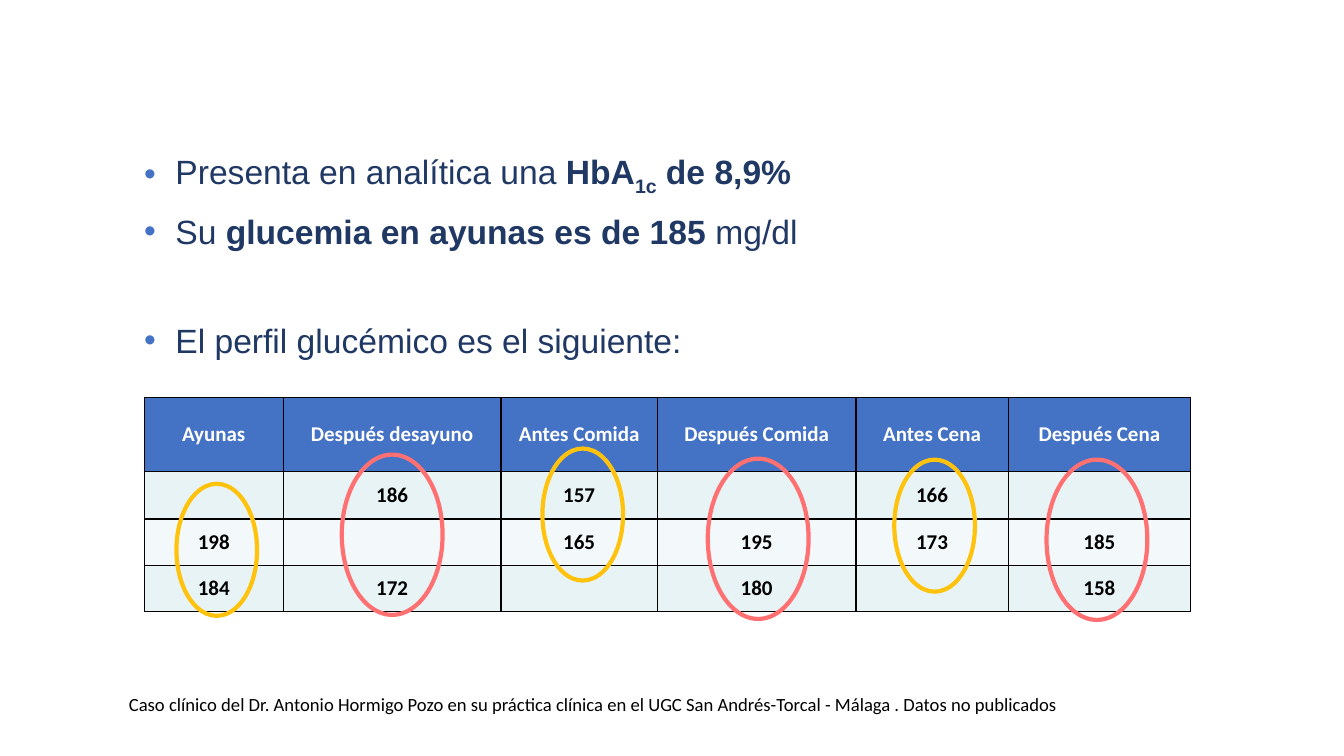
import dataclasses

import lxml.etree
import pptx
import pptx.dml.color
import pptx.enum.shapes
import pptx.enum.text
import pptx.oxml.ns
import pptx.util

Inches = pptx.util.Inches
Pt = pptx.util.Pt
ALIGN = pptx.enum.text.PP_ALIGN


@dataclasses.dataclass(frozen=True)
class Theme:
    blue: str = "4472C4"
    navy: str = "203864"
    white: str = "FFFFFF"
    black: str = "000000"
    bands: tuple = ("E7F3F4", "F3F9FA")
    yellow: str = "FFC30D"
    pink: str = "FF7072"
    body_font: str = "Arial"
    table_font: str = "Calibri"
    body_size: float = 24
    table_size: float = 15
    source_size: float = 13.3


THEME = Theme()

# Each bullet: space before in points, then (text, format) spans
BULLETS = [
    (0, [("Presenta en analítica una ", {}), ("HbA", {"bold": True}),
         ("1c", {"bold": True, "baseline": -25}), (" de 8,9%", {"bold": True})]),
    (10, [("Su ", {}), ("glucemia en ayunas es de 185 ", {"bold": True}), ("mg/dl", {})]),
    (49, [("El perfil glucémico es el siguiente:", {})]),
]
PROFILE = [
    ["Ayunas", "Después desayuno", "Antes Comida", "Después Comida", "Antes Cena", "Después Cena"],
    ["", "186", "157", "", "166", ""],
    ["198", "", "165", "195", "173", "185"],
    ["184", "172", "", "180", "", "158"],
]
COLUMN_WIDTHS = [1.38, 2.16, 1.55, 1.97, 1.51, 1.81]
ROW_HEIGHTS = [0.74, 0.47, 0.46, 0.46]
# Ring offsets from the table's corner; before-meal and after-meal rings alternate
RING_OFFSETS = [(0.32, 0.86), (1.96, 0.57), (3.95, 0.51), (5.59, 0.61), (7.44, 0.62), (8.95, 0.62)]
RING_STYLES = [(0.8, 1.31, THEME.yellow), (1, 1.59, THEME.pink)]
SOURCE = ("Caso clínico del Dr. Antonio Hormigo Pozo en su práctica clínica en el UGC "
          "San Andrés-Torcal - Málaga . Datos no publicados")


def rgb(color):
    return pptx.dml.color.RGBColor.from_string(color)


def add_element(parent, tag, **attributes):
    element = lxml.etree.SubElement(parent, pptx.oxml.ns.qn(tag))
    for name, value in attributes.items():
        element.set(name, value)
    return element


def add_span(para, text, *, font, size, color, bold=False, baseline=0):
    span = para.add_run()
    span.text = text
    span.font.name = font
    span.font.size = Pt(size)
    span.font.bold = bold
    span.font.color.rgb = rgb(color)
    if baseline:
        span._r.get_or_add_rPr().set("baseline", str(baseline * 1000))


def set_indent(para, left, first):
    properties = para._p.get_or_add_pPr()
    properties.set("marL", str(Inches(left)))
    properties.set("indent", str(Inches(first)))
    return properties


def place(shape, left, top, width, height):
    shape.left, shape.top = Inches(left), Inches(top)
    shape.width, shape.height = Inches(width), Inches(height)


def add_findings(page, left, top, width, height):
    body = page.placeholders[1]
    place(body, left, top, width, height)
    frame = body.text_frame
    frame.auto_size = pptx.enum.text.MSO_AUTO_SIZE.NONE
    frame.vertical_anchor = pptx.enum.text.MSO_ANCHOR.TOP
    frame.margin_left = frame.margin_right = frame.margin_top = frame.margin_bottom = 0
    for index, (space, spans) in enumerate(BULLETS):
        para = frame.add_paragraph() if index else frame.paragraphs[0]
        para.space_before = Pt(space)
        properties = set_indent(para, 0.31, -0.31)
        bullet_color = add_element(properties, "a:buClr")
        add_element(bullet_color, "a:srgbClr", val=THEME.blue)
        add_element(properties, "a:buFont", typeface=THEME.body_font)
        add_element(properties, "a:buChar", char="•")
        for text, style in spans:
            add_span(para, text, font=THEME.body_font, size=THEME.body_size,
                     color=THEME.navy, **style)


def format_cell(cell, text, fill, color):
    cell.vertical_anchor = pptx.enum.text.MSO_ANCHOR.MIDDLE
    cell.margin_left = cell.margin_right = Inches(0.07)
    cell.margin_top = cell.margin_bottom = Inches(0.04)
    # Borders come before the fill in the cell properties
    properties = cell._tc.get_or_add_tcPr()
    for side in ("a:lnL", "a:lnR", "a:lnT", "a:lnB"):
        border = add_element(properties, side, w=str(Pt(1)))
        add_element(add_element(border, "a:solidFill"), "a:srgbClr", val=THEME.black)
    cell.fill.solid()
    cell.fill.fore_color.rgb = rgb(fill)
    para = cell.text_frame.paragraphs[0]
    para.alignment = ALIGN.CENTER
    if text:
        add_span(para, text, font=THEME.table_font, size=THEME.table_size, color=color, bold=True)


def add_profile(page, left, top):
    # Glucose table
    table = page.shapes.add_table(
        len(PROFILE), len(COLUMN_WIDTHS), Inches(left), Inches(top),
        Inches(sum(COLUMN_WIDTHS)), Inches(sum(ROW_HEIGHTS))).table
    for column, width in zip(table.columns, COLUMN_WIDTHS):
        column.width = Inches(width)
    for index, (row, height, values) in enumerate(zip(table.rows, ROW_HEIGHTS, PROFILE)):
        row.height = Inches(height)
        fill = THEME.bands[(index - 1) % 2] if index else THEME.blue
        color = THEME.black if index else THEME.white
        for cell, text in zip(row.cells, values):
            format_cell(cell, text, fill, color)

    # Rings around the readings
    for index, (right, down) in enumerate(RING_OFFSETS):
        width, height, color = RING_STYLES[index % 2]
        ring = page.shapes.add_shape(
            pptx.enum.shapes.MSO_SHAPE.OVAL, Inches(left + right), Inches(top + down),
            Inches(width), Inches(height))
        ring.shadow.inherit = False
        ring.fill.background()
        ring.line.color.rgb = rgb(color)
        ring.line.width = Pt(3)


def add_source(page, left, top, width, height):
    box = page.shapes.add_textbox(Inches(left), Inches(top), Inches(width), Inches(height))
    frame = box.text_frame
    frame.word_wrap = True
    para = frame.paragraphs[0]
    para.alignment = ALIGN.JUSTIFY
    para.line_spacing = 1.2
    set_indent(para, 0.5, 0)
    add_span(para, SOURCE, font=THEME.table_font, size=THEME.source_size, color=THEME.black)


def main():
    deck = pptx.Presentation()
    deck.slide_width, deck.slide_height = Inches(13.33), Inches(7.5)
    page = deck.slides.add_slide(deck.slide_layouts[1])
    # The slide shows no title
    title = page.shapes.title.element
    title.getparent().remove(title)
    add_findings(page, 1.43, 1.5, 9.75, 2.73)
    add_profile(page, 1.43, 3.94)
    add_source(page, 0.68, 6.78, 12.23, 0.35)
    deck.save("out.pptx")


if __name__ == "__main__":
    main()
